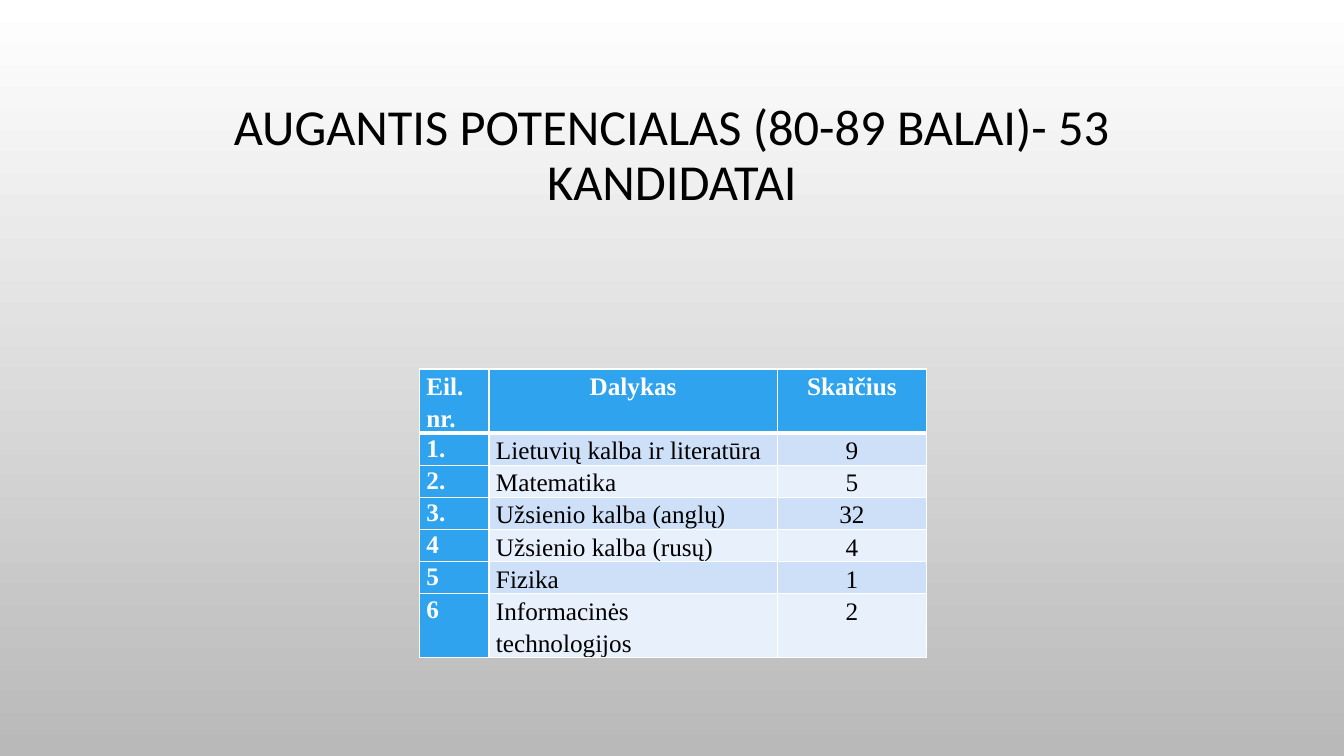
from lxml import etree
from pptx import Presentation
from pptx.dml.color import RGBColor
from pptx.enum.text import MSO_ANCHOR, MSO_AUTO_SIZE, PP_ALIGN
from pptx.oxml.ns import qn
from pptx.util import Inches, Pt

LEFT, CENTER = PP_ALIGN.LEFT, PP_ALIGN.CENTER
MIDDLE = MSO_ANCHOR.MIDDLE
NO_AUTOFIT = MSO_AUTO_SIZE.NONE
TITLE_ONLY = 5

COLORS = {
    "white": "FFFFFF",
    "black": "000000",
    "backdrop_end": "B9B9B9",
    "header": "2FA3EE",
    "band_dark": "CDE0F8",
    "band_light": "E8F0FC",
}
SUBJECTS = [
    ("Eil. nr.", "Dalykas", "Skaičius"),
    ("1.", "Lietuvių kalba ir literatūra", "9"),
    ("2.", "Matematika", "5"),
    ("3.", "Užsienio kalba (anglų)", "32"),
    ("4", "Užsienio kalba (rusų)", "4"),
    ("5", "Fizika", "1"),
    ("6", "Informacinės technologijos", "2"),
]
COLUMN_WIDTHS = [0.69, 2.86, 1.48]
ROW_HEIGHTS = [0.63] + [0.31] * 5 + [0.63]


def rgb(name):
    return RGBColor.from_string(COLORS[name])


class SlideBuilder:
    title_font = "Calibri"
    table_font = "Times New Roman"

    def __init__(self, presentation):
        self.slide = presentation.slides.add_slide(presentation.slide_layouts[TITLE_ONLY])

    def backdrop(self, top, bottom):
        fill = self.slide.background.fill
        fill.gradient()
        fill.gradient_angle = 270
        for stop, position, name in zip(fill.gradient_stops, (0, 1), (top, bottom)):
            stop.position = position
            stop.color.rgb = rgb(name)

    def set_text(self, frame, text, font, size, color, align, spacing, bold=False):
        frame.text = text
        paragraph = frame.paragraphs[0]
        paragraph.alignment = align
        paragraph.line_spacing = spacing
        style = paragraph.runs[0].font
        style.name, style.size, style.bold = font, Pt(size), bold
        style.color.rgb = rgb(color)

    def title(self, text, left, top, width, height):
        heading = self.slide.shapes.title
        heading.left, heading.top = Inches(left), Inches(top)
        heading.width, heading.height = Inches(width), Inches(height)
        frame = heading.text_frame
        frame.word_wrap = True
        frame.auto_size = NO_AUTOFIT
        frame.vertical_anchor = MIDDLE
        self.set_text(frame, text, self.title_font, 36, "black", CENTER, 0.9)

    def borders(self, cell, top, bottom):
        """Draw white cell edges, 1 pt at the sides and as given above and below."""
        properties = cell._tc.get_or_add_tcPr()
        edges = {"lnL": 1, "lnR": 1, "lnT": top, "lnB": bottom}
        for index, (edge, points) in enumerate(edges.items()):
            line = etree.Element(qn(f"a:{edge}"), w=str(Pt(points)))
            solid = etree.SubElement(line, qn("a:solidFill"))
            etree.SubElement(solid, qn("a:srgbClr"), val=COLORS["white"])
            properties.insert(index, line)

    def table(self, rows, left, top, widths, heights):
        table = self.slide.shapes.add_table(
            len(rows), len(widths), Inches(left), Inches(top),
            Inches(sum(widths)), Inches(sum(heights))).table
        for column, width in zip(table.columns, widths):
            column.width = Inches(width)
        for row, height in zip(table.rows, heights):
            row.height = Inches(height)
        for r, texts in enumerate(rows):
            for c, text in enumerate(texts):
                self.cell(table.cell(r, c), text, r, c)

    def cell(self, cell, text, row, column):
        heading = row == 0 or column == 0
        numbering = row > 0 and column == 0
        centered = column == 2 or (row, column) == (0, 1)
        band = "band_dark" if row % 2 else "band_light"
        cell.fill.solid()
        cell.fill.fore_color.rgb = rgb("header" if heading else band)
        cell.margin_left = cell.margin_right = Inches(0.07)
        cell.margin_top = cell.margin_bottom = 0
        self.set_text(cell.text_frame, text, self.table_font, 18,
                      "white" if heading else "black",
                      CENTER if centered else LEFT,
                      1.07 if numbering else 1.15, heading)
        if not numbering:
            cell.text_frame.paragraphs[0].space_after = Pt(10)
        self.borders(cell, 3 if row == 1 else 1, 3 if row == 0 else 1)


def main():
    presentation = Presentation()
    presentation.slide_width, presentation.slide_height = Inches(13.33), Inches(7.5)
    builder = SlideBuilder(presentation)
    builder.backdrop("white", "backdrop_end")
    builder.title("AUGANTIS POTENCIALAS (80-89 BALAI)- 53 KANDIDATAI", 1, 0.68, 11.33, 1.75)
    builder.table(SUBJECTS, 4.16, 3.66, COLUMN_WIDTHS, ROW_HEIGHTS)
    presentation.save("out.pptx")


if __name__ == "__main__":
    main()
